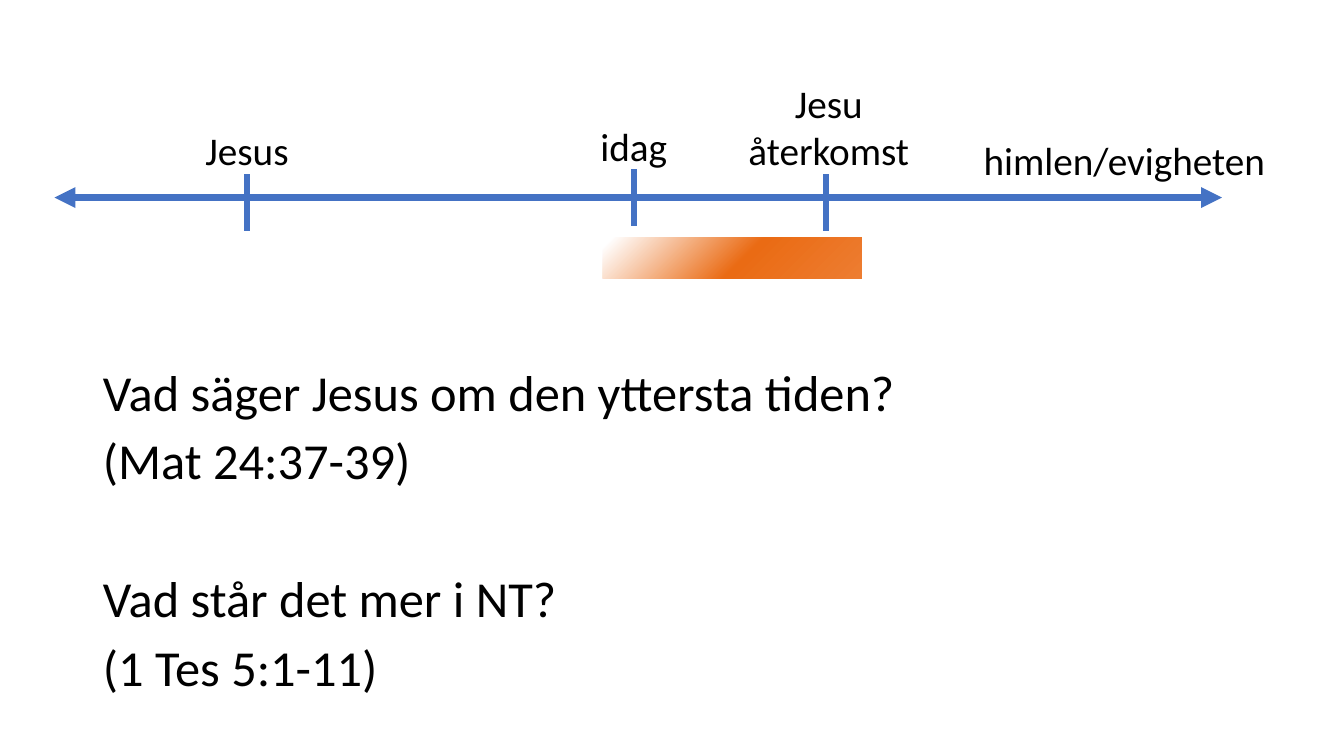
import pptx
import pptx.util
import pptx.dml.color
import pptx.enum.shapes
import pptx.enum.text
import pptx.oxml
import pptx.oxml.ns
from pptx.util import Inches, Pt

COLORS = {"line": "4472C4", "text": "000000", "orange": "ED7D31", "deep": "EA6B14", "white": "FFFFFF"}
FONT = "Calibri"
QUESTIONS = [
    ("Vad säger Jesus om den yttersta tiden?", 10),
    ("(Mat 24:37-39)", 10),
    ("Vad står det mer i NT?", 59.5),
    ("(1 Tes 5:1-11)", 10),
]
AXIS = (0.54, 12.12, 1.96)
TICK_HEIGHT = 0.56
TICKS = [(2.45, 1.73), (6.29, 1.68), (8.19, 1.73)]
LABELS = [
    ("Jesus", 1.93, 1.2, 1.04, 0.57, False),
    ("idag", 5.85, 1.16, 0.87, 0.57, False),
    ("Jesu återkomst", 7.26, 0.74, 1.92, 1.04, True),
    ("himlen/evigheten", 9.64, 1.3, 3.02, 0.57, False),
]
END_TIMES_BAR = (5.98, 2.36, 2.57, 0.4)
GRADIENT_STOPS = [(0, "orange"), (46, "deep"), (97, "white")]


def rgb(name):
    return pptx.dml.color.RGBColor.from_string(COLORS[name])


def style(paragraph, size):
    paragraph.font.name = FONT
    paragraph.font.size = Pt(size)
    paragraph.font.color.rgb = rgb("text")


def add_line(slide, start, end, width, arrows=False):
    line = slide.shapes.add_connector(
        pptx.enum.shapes.MSO_CONNECTOR.STRAIGHT, *(Inches(value) for value in start + end))
    line.line.color.rgb = rgb("line")
    line.line.width = Pt(width)
    properties = line._element.spPr
    if arrows:
        outline = properties.find(pptx.oxml.ns.qn("a:ln"))
        for tag in ("headEnd", "tailEnd"):
            outline.append(pptx.oxml.parse_xml(
                f'<a:{tag} {pptx.oxml.ns.nsdecls("a")} type="triangle"/>'))
    properties.append(pptx.oxml.parse_xml(f'<a:effectLst {pptx.oxml.ns.nsdecls("a")}/>'))


def add_questions(slide):
    body = slide.placeholders[1]
    body.left, body.top, body.width, body.height = map(Inches, (0.92, 3.6, 11.5, 3.38))
    frame = body.text_frame
    frame.auto_size = pptx.enum.text.MSO_AUTO_SIZE.NONE
    for index, (text, space) in enumerate(QUESTIONS):
        paragraph = frame.add_paragraph() if index else frame.paragraphs[0]
        paragraph.text = text
        style(paragraph, 36)
        paragraph.line_spacing = 0.9
        paragraph.space_before = Pt(space)
        properties = paragraph._p.get_or_add_pPr()
        properties.set("marL", "0")
        properties.set("indent", "0")
        bullet = pptx.oxml.parse_xml(f'<a:buNone {pptx.oxml.ns.nsdecls("a")}/>')
        properties.find(pptx.oxml.ns.qn("a:defRPr")).addprevious(bullet)


def add_label(slide, text, left, top, width, height, wrap):
    label = slide.shapes.add_textbox(*map(Inches, (left, top, width, height)))
    frame = label.text_frame
    frame.word_wrap = wrap
    frame.auto_size = pptx.enum.text.MSO_AUTO_SIZE.SHAPE_TO_FIT_TEXT
    paragraph = frame.paragraphs[0]
    paragraph.text = text
    paragraph.alignment = pptx.enum.text.PP_ALIGN.CENTER
    style(paragraph, 28)


def add_gradient_bar(slide):
    bar = slide.shapes.add_shape(
        pptx.enum.shapes.MSO_SHAPE.RECTANGLE, *map(Inches, END_TIMES_BAR))
    bar.shadow.inherit = False
    bar.line.fill.background()
    bar.fill.gradient()
    stops = "".join(
        f'<a:gs pos="{position * 1000}"><a:srgbClr val="{COLORS[name]}"/></a:gs>'
        for position, name in GRADIENT_STOPS)
    gradient = pptx.oxml.parse_xml(
        f'<a:gradFill {pptx.oxml.ns.nsdecls("a")}><a:gsLst>{stops}</a:gsLst>'
        '<a:path path="circle"><a:fillToRect l="100000" t="100000"/></a:path>'
        '<a:tileRect r="-100000" b="-100000"/></a:gradFill>')
    properties = bar._element.spPr
    properties.replace(properties.find(pptx.oxml.ns.qn("a:gradFill")), gradient)


def main():
    presentation = pptx.Presentation()
    presentation.slide_width = Inches(13.33)
    presentation.slide_height = Inches(7.5)
    slide = presentation.slides.add_slide(presentation.slide_layouts[1])
    title = slide.shapes.title._element
    title.getparent().remove(title)

    add_questions(slide)
    axis_left, axis_right, axis_y = AXIS
    add_line(slide, (axis_left, axis_y), (axis_right, axis_y), 5, arrows=True)
    for x, top in TICKS:
        add_line(slide, (x, top), (x, top + TICK_HEIGHT), 4)
    for label in LABELS:
        add_label(slide, *label)
    add_gradient_bar(slide)
    presentation.save("out.pptx")


if __name__ == "__main__":
    main()
